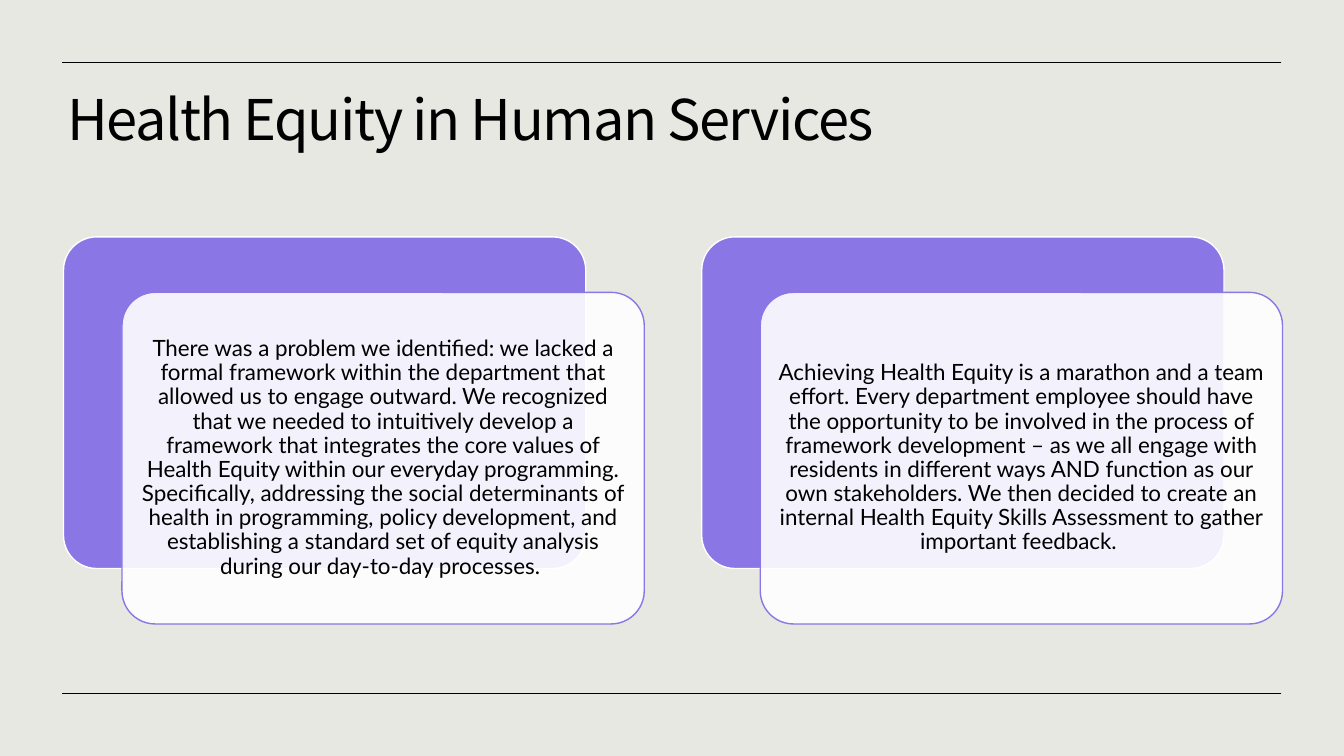
from dataclasses import dataclass

import pptx
import pptx.dml.color
import pptx.enum.shapes
import pptx.enum.text
import pptx.oxml.xmlchemy
import pptx.util
from pptx.shapes.autoshape import Shape
from pptx.slide import Slide

Inches = pptx.util.Inches
Pt = pptx.util.Pt

COLORS = {
    "background": "E7E8E2",
    "ink": "000000",
    "violet": "8A77E5",
    "white": "FFFFFF",
}
CARD_WIDTH, CARD_HEIGHT = 5.18, 3.29
CARD_TOP = 2.35
FRONT_SHIFT_X, FRONT_SHIFT_Y = 0.58, 0.55
TEXT_MARGIN = 0.095
RULE_LEFT, RULE_RIGHT = 0.62, 12.71


@dataclass(frozen=True)
class Card:
    left: float
    message: str


@dataclass(frozen=True)
class TextStyle:
    size: float
    font: str
    align: pptx.enum.text.PP_ALIGN
    anchor: pptx.enum.text.MSO_ANCHOR
    inset_x: float
    inset_y: float
    tracking: int = 0


CARDS = [
    Card(
        0.63,
        "There was a problem we identified: we lacked a formal framework within "
        "the department that allowed us to engage outward. We recognized that we "
        "needed to intuitively develop a framework that integrates the core values "
        "of Health Equity within our everyday programming. Specifically, addressing "
        "the social determinants of health in programming, policy development, and "
        "establishing a standard set of equity analysis during our day-to-day "
        "processes. ",
    ),
    Card(
        6.96,
        "Achieving Health Equity is a marathon and a team effort. Every department "
        "employee should have the opportunity to be involved in the process of "
        "framework development – as we all engage with residents in different ways "
        "AND function as our own stakeholders. We then decided to create an internal "
        "Health Equity Skills Assessment to gather important feedback. ",
    ),
]
TITLE_STYLE = TextStyle(
    40, "Noto Sans CJK KR", pptx.enum.text.PP_ALIGN.LEFT,
    pptx.enum.text.MSO_ANCHOR.TOP, 0.1, 0.05, -100,
)
MESSAGE_STYLE = TextStyle(
    16, "Lato", pptx.enum.text.PP_ALIGN.CENTER,
    pptx.enum.text.MSO_ANCHOR.MIDDLE, 0.07, 0.07,
)


def color(name: str) -> pptx.dml.color.RGBColor:
    return pptx.dml.color.RGBColor.from_string(COLORS[name])


def add_text(slide: Slide, left: float, top: float, width: float, height: float,
             wording: str, style: TextStyle) -> None:
    box = slide.shapes.add_textbox(
        Inches(left), Inches(top), Inches(width), Inches(height))
    frame = box.text_frame
    frame.word_wrap = True
    frame.vertical_anchor = style.anchor
    frame.margin_left = frame.margin_right = Inches(style.inset_x)
    frame.margin_top = frame.margin_bottom = Inches(style.inset_y)
    frame.text = wording
    paragraph = frame.paragraphs[0]
    paragraph.alignment = style.align
    paragraph.line_spacing = 0.9
    run = paragraph.runs[0]
    run.font.size = Pt(style.size)
    run.font.name = style.font
    run.font.color.rgb = color("ink")
    if style.tracking:
        run.font._element.set("spc", str(style.tracking))


def add_panel(slide: Slide, left: float, top: float, fill: str, outline: str) -> Shape:
    panel = slide.shapes.add_shape(
        pptx.enum.shapes.MSO_SHAPE.ROUNDED_RECTANGLE,
        Inches(left), Inches(top), Inches(CARD_WIDTH), Inches(CARD_HEIGHT))
    panel.adjustments[0] = 0.1
    panel.shadow.inherit = False
    panel.fill.solid()
    panel.fill.fore_color.rgb = color(fill)
    panel.line.color.rgb = color(outline)
    panel.line.width = Pt(1)
    return panel


def set_opacity(panel: Shape, percent: int) -> None:
    fill_color = panel._element.spPr.xpath("a:solidFill/a:srgbClr")[0]
    alpha = pptx.oxml.xmlchemy.OxmlElement("a:alpha")
    alpha.set("val", str(percent * 1000))
    fill_color.append(alpha)


def add_card(slide: Slide, card: Card) -> None:
    add_panel(slide, card.left, CARD_TOP, "violet", "white")
    front_left = card.left + FRONT_SHIFT_X
    front_top = CARD_TOP + FRONT_SHIFT_Y
    front = add_panel(slide, front_left, front_top, "white", "violet")
    set_opacity(front, 90)
    add_text(slide, front_left + TEXT_MARGIN, front_top + TEXT_MARGIN,
             CARD_WIDTH - 2 * TEXT_MARGIN, CARD_HEIGHT - 2 * TEXT_MARGIN,
             card.message, MESSAGE_STYLE)


def add_rule(slide: Slide, y: float) -> None:
    rule = slide.shapes.add_connector(
        pptx.enum.shapes.MSO_CONNECTOR.STRAIGHT,
        Inches(RULE_RIGHT), Inches(y), Inches(RULE_LEFT), Inches(y))
    rule.line.color.rgb = color("ink")
    rule.line.width = Pt(0.5)
    rule._element.spPr.append(pptx.oxml.xmlchemy.OxmlElement("a:effectLst"))


def main() -> None:
    deck = pptx.Presentation()
    deck.slide_width = Inches(13.33)
    deck.slide_height = Inches(7.5)
    slide = deck.slides.add_slide(deck.slide_layouts[6])
    slide.background.fill.solid()
    slide.background.fill.fore_color.rgb = color("background")
    add_text(slide, 0.57, 0.86, 12.15, 1.15,
             "Health Equity in Human Services", TITLE_STYLE)
    for y in (0.62, 6.88):
        add_rule(slide, y)
    for card in CARDS:
        add_card(slide, card)
    deck.save("out.pptx")


if __name__ == "__main__":
    main()
